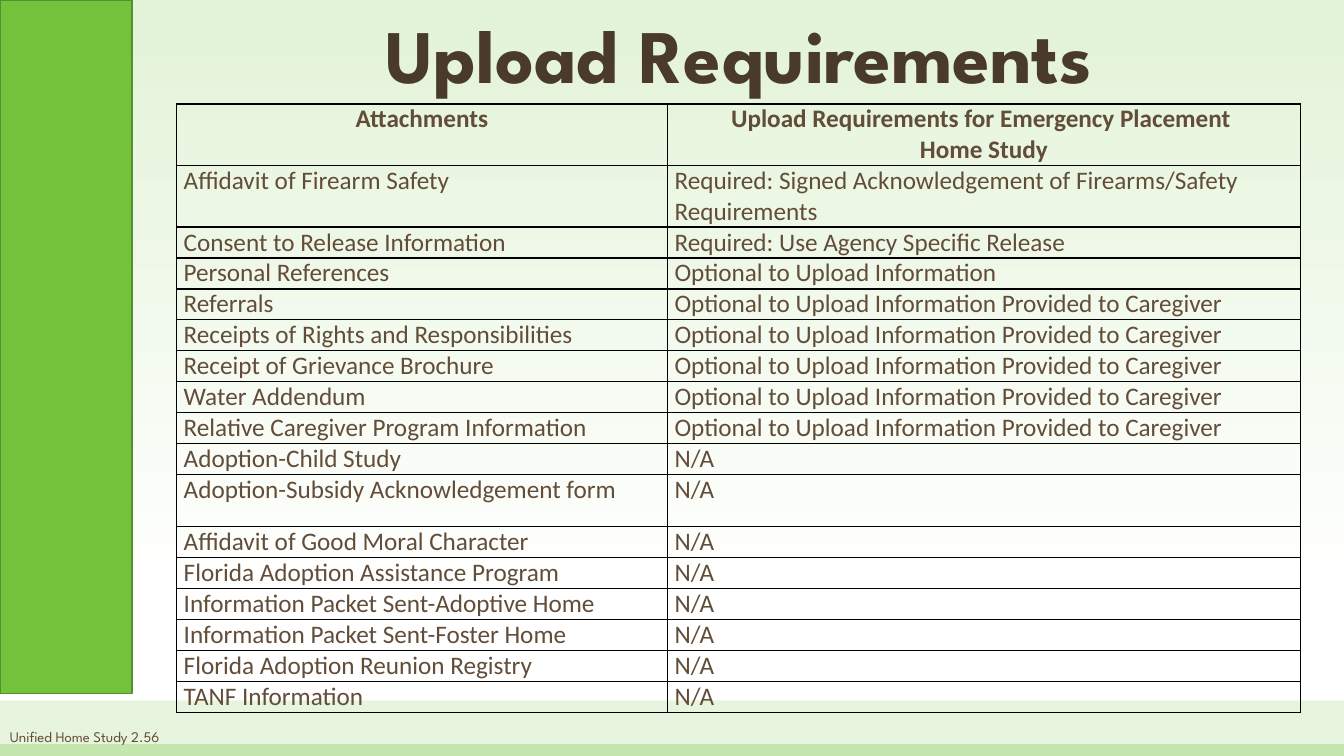
from lxml.etree import SubElement
from pptx import Presentation
from pptx.dml.color import RGBColor
from pptx.enum.shapes import MSO_SHAPE
from pptx.enum.text import MSO_ANCHOR, PP_ALIGN
from pptx.oxml.ns import qn
from pptx.util import Cm, Pt

GREEN = RGBColor(0x72, 0xC2, 0x3C)
EDGE = RGBColor(0x54, 0x90, 0x2C)
PALE = RGBColor(0xE3, 0xF3, 0xD8)
WHITE = RGBColor(0xFF, 0xFF, 0xFF)
BLACK = RGBColor(0, 0, 0)
BROWN = RGBColor(0x62, 0x4D, 0x38)
DARK = RGBColor(0x4A, 0x3A, 0x2A)
HEAD = "League Spartan"
BODY = "Calibri"

GIVEN = "Optional to Upload Information Provided to Caregiver"
NONE = "N/A"
ROWS = [
    ("Attachments", "Upload Requirements for Emergency Placement \nHome Study"),
    ("Affidavit of Firearm Safety",
     "Required: Signed Acknowledgement of Firearms/Safety Requirements"),
    ("Consent to Release Information", "Required: Use Agency Specific Release"),
    ("Personal References", "Optional to Upload Information"),
    ("Referrals", GIVEN),
    ("Receipts of Rights and Responsibilities", GIVEN),
    ("Receipt of Grievance Brochure", GIVEN),
    ("Water Addendum", GIVEN),
    ("Relative Caregiver Program Information", GIVEN),
    ("Adoption-Child Study", NONE),
    ("Adoption-Subsidy Acknowledgement form", NONE),
    ("Affidavit of Good Moral Character", NONE),
    ("Florida Adoption Assistance Program", NONE),
    ("Information Packet Sent-Adoptive Home", NONE),
    ("Information Packet Sent-Foster Home", NONE),
    ("Florida Adoption Reunion Registry", NONE),
    ("TANF Information", NONE),
]
COLS = (12.37, 15.95)
ROW = 0.78
TALL = {0: 1.55, 1: 1.55, 10: 1.31}


def paint_back(slide):
    fill = slide.background.fill
    fill.gradient()
    fill.gradient_angle = 270
    for stop, color, place in zip(fill.gradient_stops, (PALE, WHITE), (0, 0.79)):
        stop.color.rgb = color
        stop.position = place


def add_block(slide, box, alpha=None, edge=None):
    """Add a green rectangle; alpha is its opacity in percent."""
    block = slide.shapes.add_shape(MSO_SHAPE.RECTANGLE, *map(Cm, box))
    block.shadow.inherit = False
    block.fill.solid()
    block.fill.fore_color.rgb = GREEN
    if alpha:
        color = block._element.spPr.find(qn("a:solidFill"))[0]
        SubElement(color, qn("a:alpha"), val=str(alpha * 1000))
    if edge:
        block.line.color.rgb = edge
        block.line.width = Pt(1)
    else:
        block.line.fill.background()


def write(para, text, size, face, color, bold=False):
    for count, line in enumerate(text.split("\n")):
        if count:
            para.add_line_break()
        run = para.add_run()
        run.text = line
        font = run.font
        font.size, font.name, font.bold = Pt(size), face, bold
        font.color.rgb = color


def add_text(slide, box, anchor):
    """Add a wrapping text box and return its first paragraph."""
    frame = slide.shapes.add_textbox(*map(Cm, box)).text_frame
    frame.word_wrap = True
    frame.vertical_anchor = anchor
    return frame.paragraphs[0]


def add_borders(cell):
    props = cell._tc.get_or_add_tcPr()
    for side in ("lnL", "lnR", "lnT", "lnB"):
        line = SubElement(props, qn(f"a:{side}"), w=str(Pt(1)))
        fill = SubElement(line, qn("a:solidFill"))
        SubElement(fill, qn("a:srgbClr"), val=str(BLACK))


def fill_cell(cell, text, head):
    add_borders(cell)
    cell.fill.background()
    cell.margin_left = cell.margin_right = Cm(0.18)
    cell.margin_top = cell.margin_bottom = 0
    para = cell.text_frame.paragraphs[0]
    para.alignment = PP_ALIGN.CENTER if head else PP_ALIGN.LEFT
    write(para, text, 18, BODY, BROWN, head)


def add_grid(slide):
    highs = [TALL.get(i, ROW) for i in range(len(ROWS))]
    grid = slide.shapes.add_table(len(ROWS), len(COLS), Cm(4.45), Cm(2.62),
                                  Cm(sum(COLS)), Cm(sum(highs))).table
    grid.first_row = grid.horz_banding = False
    for col, width in zip(grid.columns, COLS):
        col.width = Cm(width)
    for i, (row, high) in enumerate(zip(grid.rows, highs)):
        row.height = Cm(high)
        for cell, text in zip(row.cells, ROWS[i]):
            fill_cell(cell, text, i == 0)


def main():
    deck = Presentation()
    deck.slide_width, deck.slide_height = Cm(33.87), Cm(19.05)
    slide = deck.slides.add_slide(deck.slide_layouts[6])
    paint_back(slide)
    add_block(slide, (0, 17.65, 33.87, 1.4), alpha=17)
    add_block(slide, (0, 18.75, 33.87, 0.3), alpha=28)

    title = add_text(slide, (5.41, 0.05, 26.42, 2.59), MSO_ANCHOR.BOTTOM)
    title.alignment = PP_ALIGN.CENTER
    title.line_spacing = 0.9
    write(title, "Upload Requirements", 54, HEAD, DARK, True)

    foot = add_text(slide, (0, 18.21, 7.59, 0.84), MSO_ANCHOR.TOP)
    write(foot, "Unified Home Study 2.56", 10.5, HEAD, BROWN)

    add_grid(slide)
    add_block(slide, (0, 0, 3.33, 17.48), edge=EDGE)
    deck.save("out.pptx")


if __name__ == "__main__":
    main()
